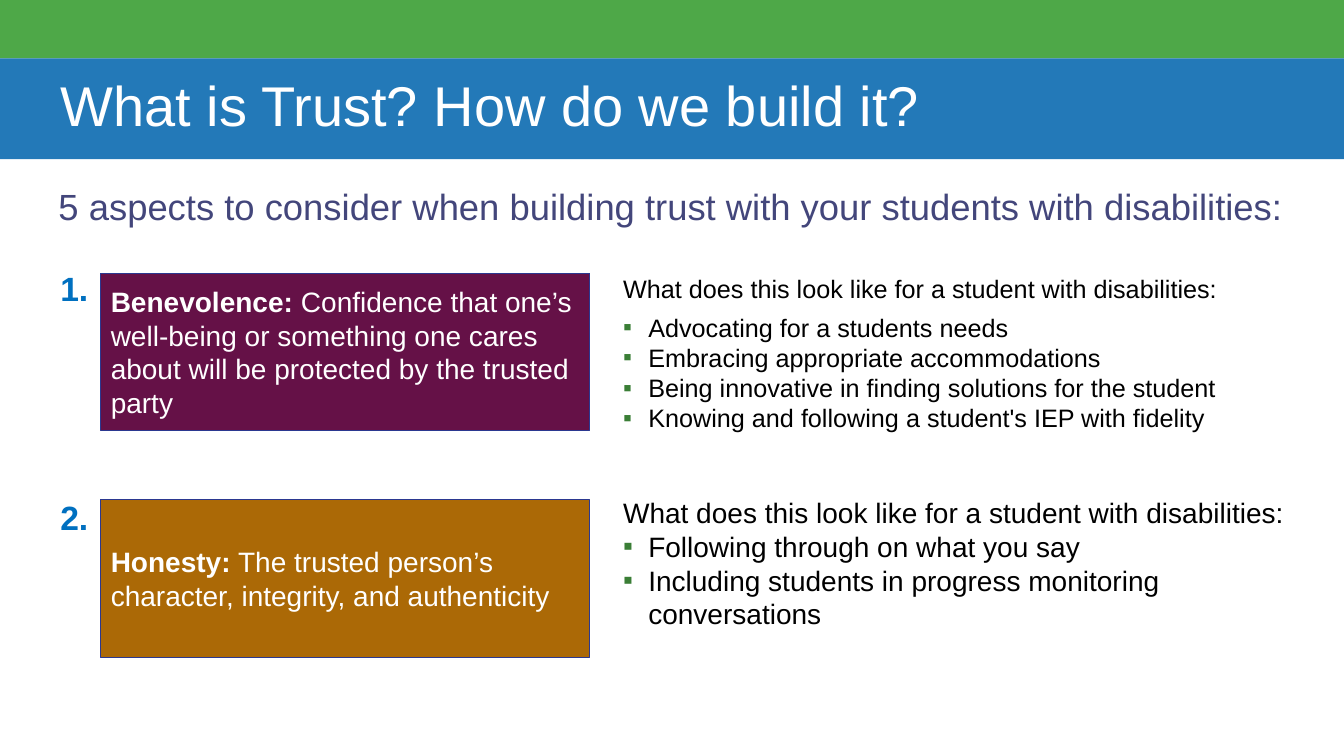
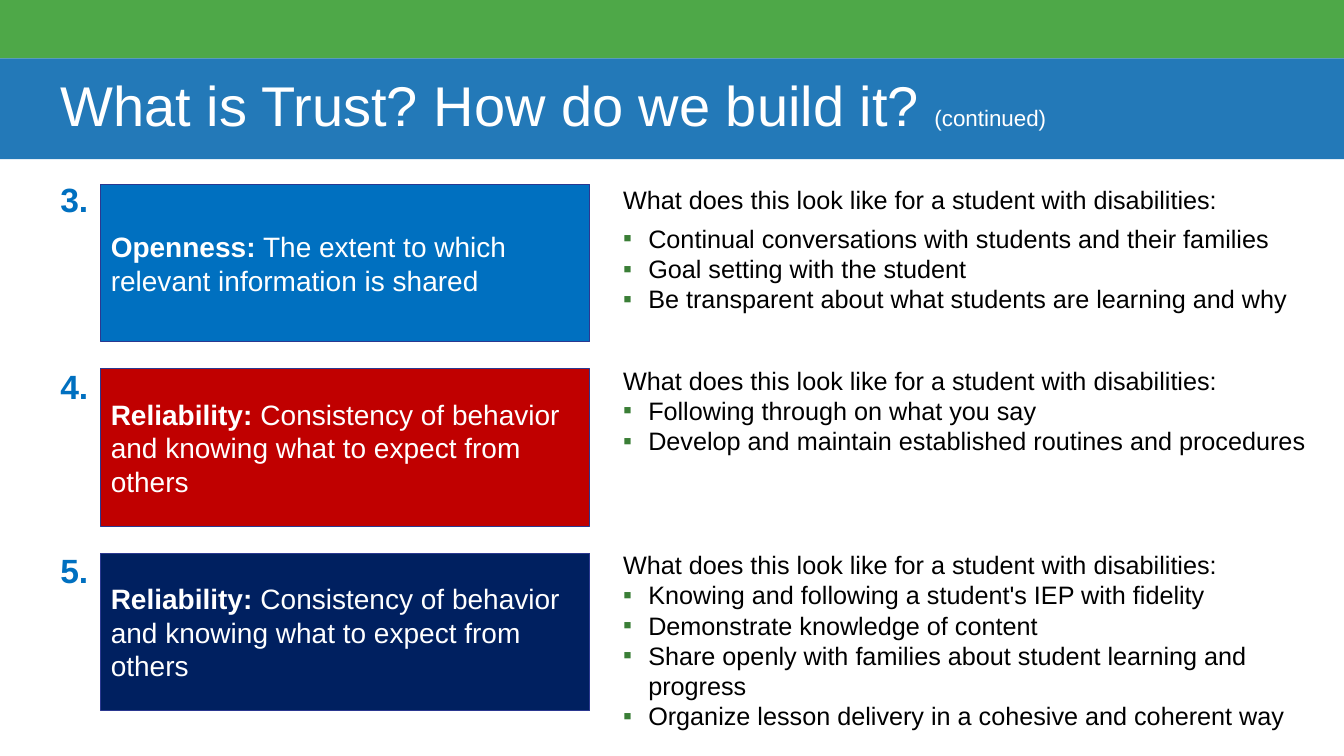
"""Builds two slides on the five aspects of trust."""
from lxml import etree
from pptx import Presentation
from pptx.dml.color import RGBColor
from pptx.enum.shapes import MSO_SHAPE
from pptx.enum.text import MSO_ANCHOR, MSO_AUTO_SIZE, PP_ALIGN
from pptx.oxml.ns import qn
from pptx.util import Pt

RECTANGLE = MSO_SHAPE.RECTANGLE
MIDDLE = MSO_ANCHOR.MIDDLE
TOP = MSO_ANCHOR.TOP
NO_FIT = MSO_AUTO_SIZE.NONE
LEFT = PP_ALIGN.LEFT

PX = 9144
WIDTH, HEIGHT = 1333, 750
BAND_HEIGHT, TITLE_HEIGHT = 58, 100
NUMBER_LEFT, NUMBER_WIDTH, NUMBER_HEIGHT = 50, 67, 50
ASPECT_LEFT, ASPECT_WIDTH, ASPECT_HEIGHT = 100, 485, 156
LIST_LEFT, LIST_WIDTH, LIST_HEIGHT = 618, 683, 180
BULLET_INDENT = 25

FONT = "Arial"
COLORS = {
    "band": "4EA848", "title": "2379B8", "white": "FFFFFF", "black": "000000",
    "lead": "43467B", "number": "0070C0", "outline": "2B3890", "bullet": "3A7E36",
    "plum": "651147", "ochre": "AB6906", "blue": "0070C0", "red": "C00000",
    "navy": "002060",
}
TITLE = "What is Trust? How do we build it?"
QUESTION = "What does this look like for a student with disabilities:"
RELIABILITY = " Consistency of behavior and knowing what to expect from others"

SLIDES = [
    {
        "layout": 3,
        "title": [(TITLE, 40)],
        "lead": "5 aspects to consider when building trust with your students with disabilities:",
        "first_top": 271, "pitch": 225,
        "aspects": [
            ("Benevolence:",
             " Confidence that one’s well-being or something one cares about will be "
             "protected by the trusted party",
             "plum", 18,
             ["Advocating for a students needs",
              "Embracing appropriate accommodations",
              "Being innovative in finding solutions for the student",
              "Knowing and following a student's IEP with fidelity"]),
            ("Honesty:", " The trusted person’s character, integrity, and authenticity",
             "ochre", 20,
             ["Following through on what you say",
              "Including students in progress monitoring conversations"]),
        ],
    },
    {
        "layout": 1,
        "title": [(TITLE + " ", 40), ("(continued)", 16)],
        "lead": None,
        "first_top": 183, "pitch": 183,
        "aspects": [
            ("Openness:", " The extent to which relevant information is shared",
             "blue", 18,
             ["Continual conversations with students and their families",
              "Goal setting with the student",
              "Be transparent about what students are learning and why"]),
            ("Reliability:", RELIABILITY, "red", 18,
             ["Following through on what you say",
              "Develop and maintain established routines and procedures"]),
            ("Reliability:", RELIABILITY, "navy", 18,
             ["Knowing and following a student's IEP with fidelity",
              "Demonstrate knowledge of content",
              "Share openly with families about student learning and progress",
              "Organize lesson delivery in a cohesive and coherent way"]),
        ],
    },
]


def add_run(paragraph, text, size, color, bold=False):
    run = paragraph.add_run()
    run.text = text
    run.font.name = FONT
    run.font.size = Pt(size)
    run.font.bold = bold
    run.font.color.rgb = RGBColor.from_string(COLORS[color])


def set_frame(shape, box, insets, anchor=TOP):
    shape.left, shape.top, shape.width, shape.height = (n * PX for n in box)
    frame = shape.text_frame
    frame.word_wrap = True
    frame.auto_size = NO_FIT
    frame.vertical_anchor = anchor
    frame.margin_left = frame.margin_right = insets[0] * PX
    frame.margin_top = frame.margin_bottom = insets[1] * PX
    frame.paragraphs[0].alignment = LEFT
    return frame


prs = Presentation()
prs.slide_width, prs.slide_height = WIDTH * PX, HEIGHT * PX
aspect_number = 0

for content in SLIDES:
    slide = prs.slides.add_slide(prs.slide_layouts[content["layout"]])
    shapes = slide.shapes

    if aspect_number == 0:
        band = shapes.add_shape(RECTANGLE, 0, 0, WIDTH * PX, BAND_HEIGHT * PX)
        band.shadow.inherit = False
        band.fill.solid()
        band.fill.fore_color.rgb = RGBColor.from_string(COLORS["band"])
        band.line.fill.background()
        band.element.nvSpPr.cNvPr.set("id", "20")
        prs.slide_master.shapes.element.insert(2, band.element)

    heading = shapes.title
    heading.fill.solid()
    heading.fill.fore_color.rgb = RGBColor.from_string(COLORS["title"])
    frame = set_frame(heading, (0, BAND_HEIGHT, WIDTH, TITLE_HEIGHT), (60, 0), MIDDLE)
    frame.paragraphs[0].line_spacing = 0.9
    for text, size in content["title"]:
        add_run(frame.paragraphs[0], text, size, "white")

    bodies = [holder for holder in slide.placeholders if holder.placeholder_format.idx > 0]
    if content["lead"]:
        frame = set_frame(bodies.pop(0), (58, 183, 1243, 44), (0, 0))
        lead = frame.paragraphs[0]
        properties = lead._p.get_or_add_pPr()
        properties.set("marL", "0")
        properties.set("indent", "0")
        etree.SubElement(properties, qn("a:buNone"))
        lead.space_before = Pt(0)
        add_run(lead, content["lead"], 26, "lead")

    for row, (term, meaning, fill, size, examples) in enumerate(content["aspects"]):
        aspect_number += 1
        top = content["first_top"] + row * content["pitch"]
        number_rise, list_rise, list_gap = (8, 4, 0) if row else (10, 0, 6)

        number = shapes.add_textbox(0, 0, 0, 0)
        frame = set_frame(
            number, (NUMBER_LEFT, top - number_rise, NUMBER_WIDTH, NUMBER_HEIGHT), (10, 5))
        add_run(frame.paragraphs[0], f"{aspect_number}.", 24, "number", True)

        aspect = shapes.add_shape(RECTANGLE, 0, 0, 0, 0)
        aspect.shadow.inherit = False
        aspect.fill.solid()
        aspect.fill.fore_color.rgb = RGBColor.from_string(COLORS[fill])
        aspect.line.color.rgb = RGBColor.from_string(COLORS["outline"])
        aspect.line.width = Pt(0.75)
        frame = set_frame(
            aspect, (ASPECT_LEFT, top, ASPECT_WIDTH, ASPECT_HEIGHT), (10, 10), MIDDLE)
        add_run(frame.paragraphs[0], term, 20, "white", True)
        add_run(frame.paragraphs[0], meaning, 20, "white")

        practice = shapes.add_textbox(0, 0, 0, 0) if row else bodies.pop(0)
        frame = set_frame(
            practice, (LIST_LEFT, top - list_rise, LIST_WIDTH, LIST_HEIGHT), (0, 0))
        for position, text in enumerate([QUESTION] + examples):
            line = frame.add_paragraph() if position else frame.paragraphs[0]
            indent = BULLET_INDENT * PX if position else 0
            properties = line._p.get_or_add_pPr()
            properties.set("marL", str(indent))
            properties.set("indent", str(-indent))
            if position:
                tint = etree.SubElement(properties, qn("a:buClr"))
                etree.SubElement(tint, qn("a:srgbClr"), val=COLORS["bullet"])
                etree.SubElement(properties, qn("a:buFont"), typeface=FONT)
                etree.SubElement(properties, qn("a:buChar"), char="▪")
            else:
                etree.SubElement(properties, qn("a:buNone"))
            line.space_before = Pt(list_gap if position == 1 else 0)
            add_run(line, text, size, "black")

prs.save("out.pptx")
